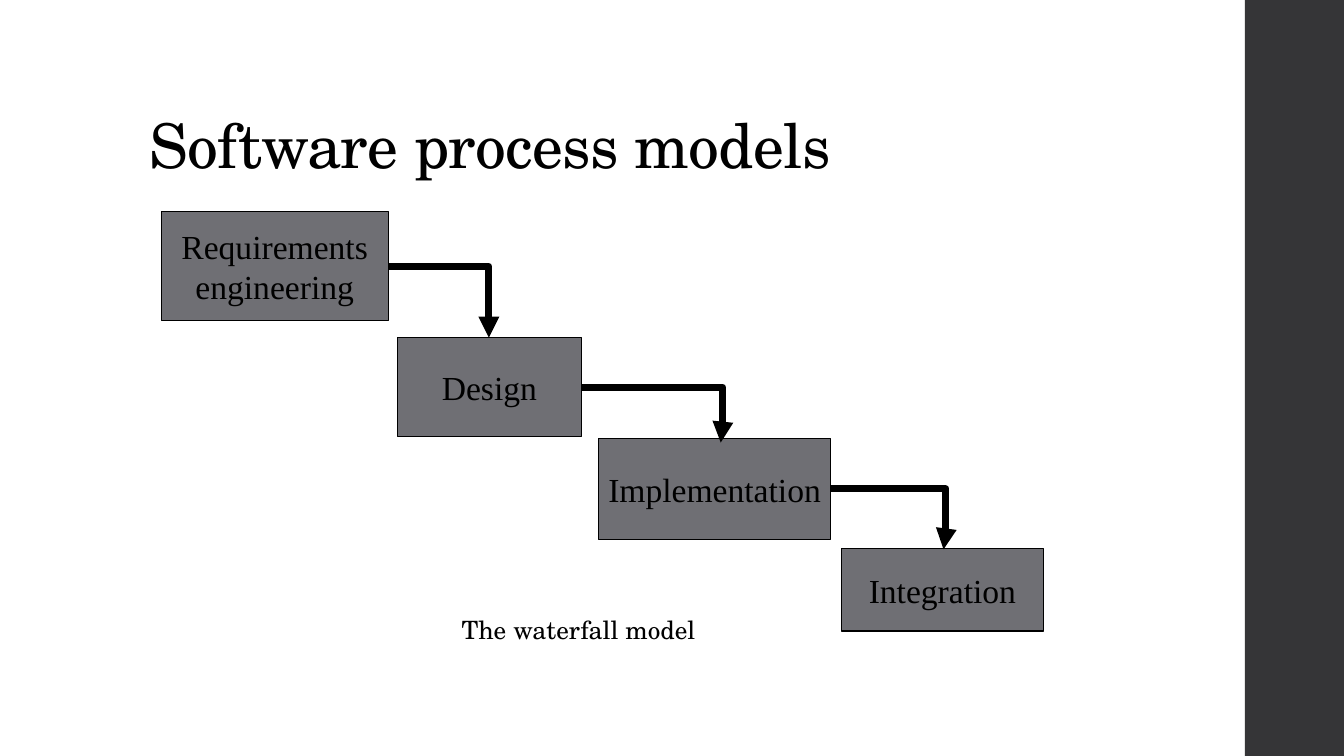
"""Build a slide that shows the waterfall model as a staircase of steps."""
import dataclasses
import itertools
import typing

import lxml.etree
import pptx
import pptx.dml.color
import pptx.enum.shapes
import pptx.enum.text
import pptx.oxml.ns
import pptx.util

CELL = 0.1
PAGE_COLUMNS, PAGE_ROWS = 133.33, 75


@dataclasses.dataclass(frozen=True)
class Theme:
    ink: str = "000000"
    sidebar: str = "353537"
    step: str = "6F6F74"
    heading_font: str = "TeX Gyre Schola"
    step_font: str = "Times New Roman"
    title_size: float = 44
    step_size: float = 24
    caption_size: float = 18
    outline: float = 0.75
    arrow: float = 5


class Area(typing.NamedTuple):
    column: float
    row: float
    columns: float
    rows: float


class Step(typing.NamedTuple):
    label: str
    area: Area


class Arrival(typing.NamedTuple):
    column: float
    row: float
    bend: float


THEME = Theme()
SIDEBAR = Area(123.5, 0, 10, PAGE_ROWS)
TITLE = Area(13.8, 4, 106, 14.5)
CAPTION = Area(44.8, 60.5, 26.2, 4)
STEPS = [
    Step("Requirements\nengineering", Area(16, 21, 22.5, 10.8)),
    Step("Design", Area(39.4, 33.5, 18.3, 9.8)),
    Step("Implementation", Area(59.4, 43.5, 23, 10)),
    Step("Integration", Area(83.5, 54.4, 20, 8.2)),
]
ARRIVALS = [Arrival(48.5, 33.5, 1), Arrival(71.5, 43.9, 1.014), Arrival(93.6, 54.5, 1.022)]


def cells(count: float) -> pptx.util.Emu:
    return pptx.util.Inches(count * CELL)


def place(area: Area) -> list[pptx.util.Emu]:
    return [cells(length) for length in area]


def color(value: str) -> pptx.dml.color.RGBColor:
    return pptx.dml.color.RGBColor.from_string(value)


def write(frame, text: str, font: str, size: float) -> None:
    frame.text = text
    for para in frame.paragraphs:
        for span in para.runs:
            span.font.name = font
            span.font.size = pptx.util.Pt(size)
            span.font.color.rgb = color(THEME.ink)


def add_panel(page, area: Area, fill: str):
    panel = page.shapes.add_shape(pptx.enum.shapes.MSO_SHAPE.RECTANGLE, *place(area))
    panel.shadow.inherit = False
    panel.fill.solid()
    panel.fill.fore_color.rgb = color(fill)
    panel.line.fill.background()
    return panel


def add_title(page, text: str) -> None:
    title = page.shapes.title
    title.left, title.top, title.width, title.height = place(TITLE)
    frame = title.text_frame
    write(frame, text, THEME.heading_font, THEME.title_size)
    frame.auto_size = pptx.enum.text.MSO_AUTO_SIZE.NONE
    frame.vertical_anchor = pptx.enum.text.MSO_ANCHOR.BOTTOM
    para = frame.paragraphs[0]
    para.alignment = pptx.enum.text.PP_ALIGN.LEFT
    para.line_spacing = 0.9
    para.runs[0].font._element.set("spc", "-50")


def add_step(page, step: Step) -> None:
    box = add_panel(page, step.area, THEME.step)
    box.line.color.rgb = color(THEME.ink)
    box.line.width = pptx.util.Pt(THEME.outline)
    frame = box.text_frame
    write(frame, step.label, THEME.step_font, THEME.step_size)
    frame.word_wrap = False
    frame.vertical_anchor = pptx.enum.text.MSO_ANCHOR.MIDDLE
    for para in frame.paragraphs:
        para.alignment = pptx.enum.text.PP_ALIGN.CENTER


def add_arrow(page, area: Area, arrival: Arrival) -> None:
    arrow = page.shapes.add_connector(
        pptx.enum.shapes.MSO_CONNECTOR.ELBOW,
        cells(area.column + area.columns), cells(area.row + area.rows / 2),
        cells(arrival.column), cells(arrival.row))
    arrow.line.color.rgb = color(THEME.ink)
    arrow.line.width = pptx.util.Pt(THEME.arrow)
    qualify = pptx.oxml.ns.qn
    lxml.etree.SubElement(arrow.line._get_or_add_ln(), qualify("a:tailEnd"), type="triangle")
    properties = arrow._element.spPr
    lxml.etree.SubElement(properties, qualify("a:effectLst"))
    geometry = properties.find(qualify("a:prstGeom"))
    if arrival.bend == 1:
        geometry.set("prst", "bentConnector2")
    else:
        guides = geometry.find(qualify("a:avLst"))
        lxml.etree.SubElement(guides, qualify("a:gd"), name="adj1",
                              fmla=f"val {round(arrival.bend * 100000)}")


def add_caption(page, text: str) -> None:
    frame = page.shapes.add_textbox(*place(CAPTION)).text_frame
    write(frame, text, THEME.heading_font, THEME.caption_size)
    frame.word_wrap = False
    frame.auto_size = pptx.enum.text.MSO_AUTO_SIZE.SHAPE_TO_FIT_TEXT


def main() -> None:
    deck = pptx.Presentation()
    deck.slide_width, deck.slide_height = cells(PAGE_COLUMNS), cells(PAGE_ROWS)
    page = deck.slides.add_slide(deck.slide_layouts.get_by_name("Title Only"))
    add_panel(page, SIDEBAR, THEME.sidebar)
    add_title(page, "Software process models")
    for step in STEPS:
        add_step(page, step)
    for (step, _), arrival in zip(itertools.pairwise(STEPS), ARRIVALS):
        add_arrow(page, step.area, arrival)
    add_caption(page, "The waterfall model")
    deck.save("out.pptx")


if __name__ == "__main__":
    main()
